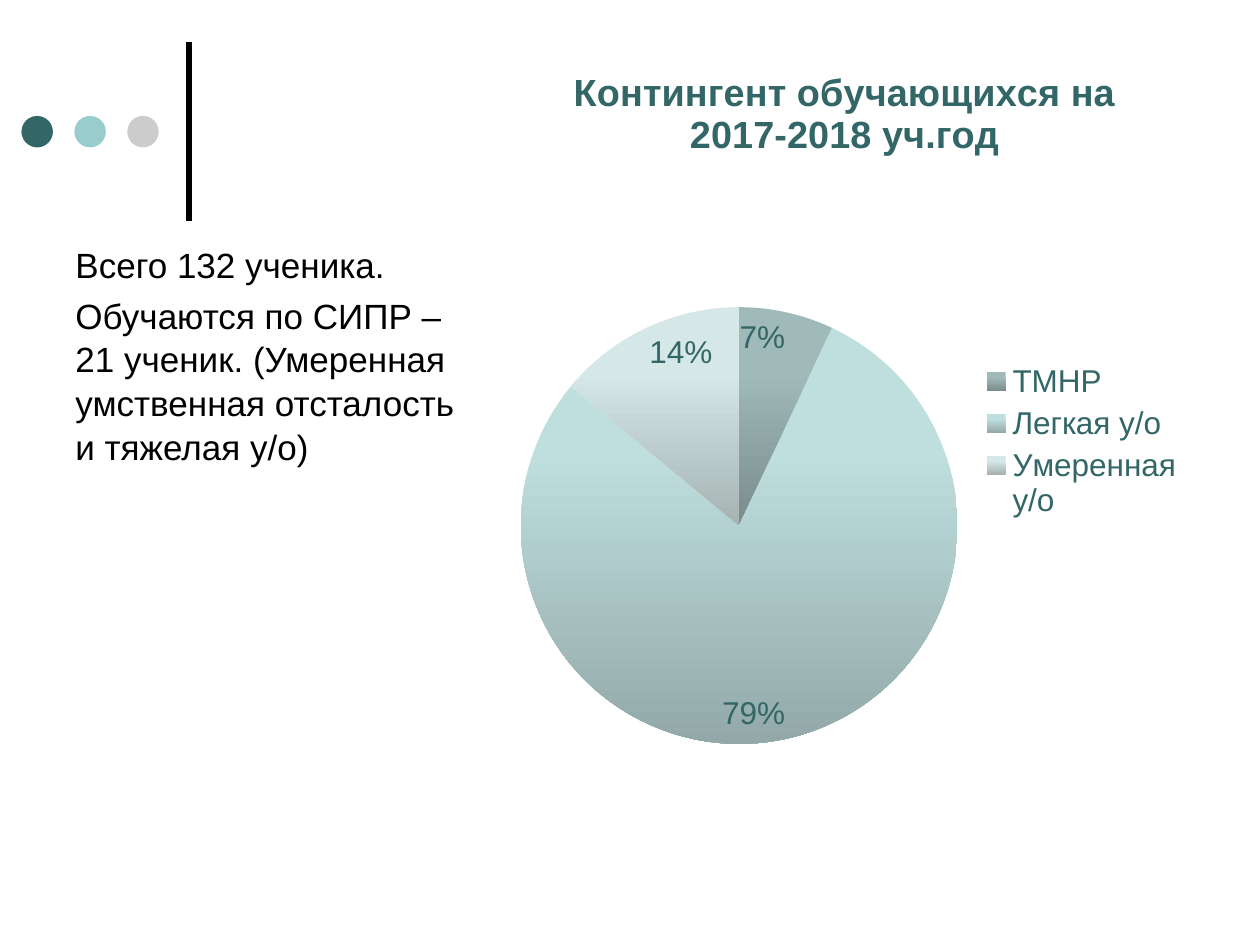
from dataclasses import dataclass

import lxml.etree
import pptx
import pptx.chart.chart
import pptx.chart.data
import pptx.dml.color
import pptx.enum.chart
import pptx.enum.shapes
import pptx.oxml
import pptx.oxml.ns
import pptx.slide
import pptx.util
from pptx.util import Inches

FONT = "Arial"
COLORS = {
    "black": "000000",
    "teal": "336666",
    "aqua": "99CCCC",
    "gray": "CCCCCC",
}


@dataclass
class Slice:
    category: str
    value: int
    top_color: str
    bottom_color: str


SLICES = [
    Slice("ТМНР", 7, "A0B9B9", "7A8C8C"),
    Slice("Легкая у/о", 79, "BFDEDE", "93A9A9"),
    Slice("Умеренная у/о", 14, "D5E7E7", "A5B3B3"),
]
BODY = [
    "Всего 132 ученика.",
    "Обучаются по СИПР – 21 ученик. (Умеренная умственная отсталость и тяжелая у/о)",
]


def rgb(value: str) -> pptx.dml.color.RGBColor:
    return pptx.dml.color.RGBColor.from_string(value)


def style_font(font, size: float, color: str, bold: bool = False) -> None:
    font.name = FONT
    font.size = pptx.util.Pt(size)
    font.bold = bold
    font.color.rgb = rgb(COLORS[color])


def add_dot(slide: pptx.slide.Slide, left: float, color: str) -> None:
    dot = slide.shapes.add_shape(
        pptx.enum.shapes.MSO_SHAPE.OVAL,
        Inches(left), Inches(0.92), Inches(0.25), Inches(0.25),
    )
    dot.shadow.inherit = False
    dot.fill.solid()
    dot.fill.fore_color.rgb = rgb(COLORS[color])
    dot.line.fill.background()


def add_rule(slide: pptx.slide.Slide) -> None:
    rule = slide.shapes.add_connector(
        pptx.enum.shapes.MSO_CONNECTOR.STRAIGHT,
        Inches(1.5), Inches(1.75), Inches(1.5), Inches(0.33),
    )
    rule.line.color.rgb = rgb(COLORS["black"])
    rule.line.width = pptx.util.Pt(3)
    lxml.etree.SubElement(rule._element.spPr, pptx.oxml.ns.qn("a:effectLst"))


def place_plot(chart: pptx.chart.chart.Chart, x: float, y: float, width: float, height: float) -> None:
    """Fix the inner plot area, in fractions of the chart."""
    plot_area = chart._chartSpace.chart.plotArea
    for old_layout in plot_area.findall(pptx.oxml.ns.qn("c:layout")):
        plot_area.remove(old_layout)
    layout = pptx.oxml.parse_xml(
        f'<c:layout {pptx.oxml.ns.nsdecls("c")}><c:manualLayout>'
        '<c:layoutTarget val="inner"/><c:xMode val="edge"/><c:yMode val="edge"/>'
        f'<c:x val="{x}"/><c:y val="{y}"/><c:w val="{width}"/><c:h val="{height}"/>'
        "</c:manualLayout></c:layout>"
    )
    plot_area.insert(0, layout)


def add_pie(slide: pptx.slide.Slide) -> None:
    data = pptx.chart.data.CategoryChartData()
    data.categories = [part.category for part in SLICES]
    data.add_series("Series 1", [part.value for part in SLICES])
    chart = slide.shapes.add_chart(
        pptx.enum.chart.XL_CHART_TYPE.PIE,
        Inches(3.91), Inches(0.3), Inches(5.59), Inches(6.4), data,
    ).chart
    style_font(chart.font, 18, "teal")

    # Title and legend
    chart.has_title = True
    title = chart.chart_title.text_frame
    title.text = "Контингент обучающихся на 2017-2018 уч.год"
    style_font(title.paragraphs[0].font, 21.6, "teal", bold=True)
    chart.has_legend = True
    chart.legend.position = pptx.enum.chart.XL_LEGEND_POSITION.RIGHT
    chart.legend.include_in_layout = False
    place_plot(chart, 0.04, 0.33, 0.62, 0.55)

    # Percent labels
    plot = chart.plots[0]
    plot.vary_by_categories = True
    plot.has_data_labels = True
    labels = plot.data_labels
    labels.show_percentage = True
    labels.show_value = False
    labels.number_format = "0%"
    labels.number_format_is_linked = False
    labels.position = pptx.enum.chart.XL_LABEL_POSITION.INSIDE_END
    style_font(labels.font, 18, "teal")

    # Slices shade downwards
    for index, part in enumerate(SLICES):
        point_format = plot.series[0].points[index].format
        point_format.line.fill.background()
        fill = point_format.fill
        fill.gradient()
        fill.gradient_angle = 270
        shades = ((part.top_color, 0.3), (part.bottom_color, 1))
        for stop, (color, position) in zip(fill.gradient_stops, shades):
            stop.color.rgb = rgb(color)
            stop.position = position


def add_body(slide: pptx.slide.Slide) -> None:
    frame = slide.shapes.add_textbox(
        Inches(0.5), Inches(1.87), Inches(3.29), Inches(4.83)
    ).text_frame
    frame.word_wrap = True
    frame.text = "\n".join(BODY)
    for paragraph in frame.paragraphs:
        style_font(paragraph.font, 20, "black")
        paragraph.line_spacing = 1.04
    frame.paragraphs[1].space_before = pptx.util.Pt(4)


def main() -> None:
    presentation = pptx.Presentation()
    presentation.slide_width = Inches(10)
    presentation.slide_height = Inches(7.5)
    slide = presentation.slides.add_slide(presentation.slide_layouts[6])

    # Corner ornament
    add_rule(slide)
    for index, color in enumerate(("teal", "aqua", "gray")):
        add_dot(slide, 0.17 + 0.42 * index, color)

    # Content
    add_pie(slide)
    add_body(slide)
    presentation.save("out.pptx")


if __name__ == "__main__":
    main()
